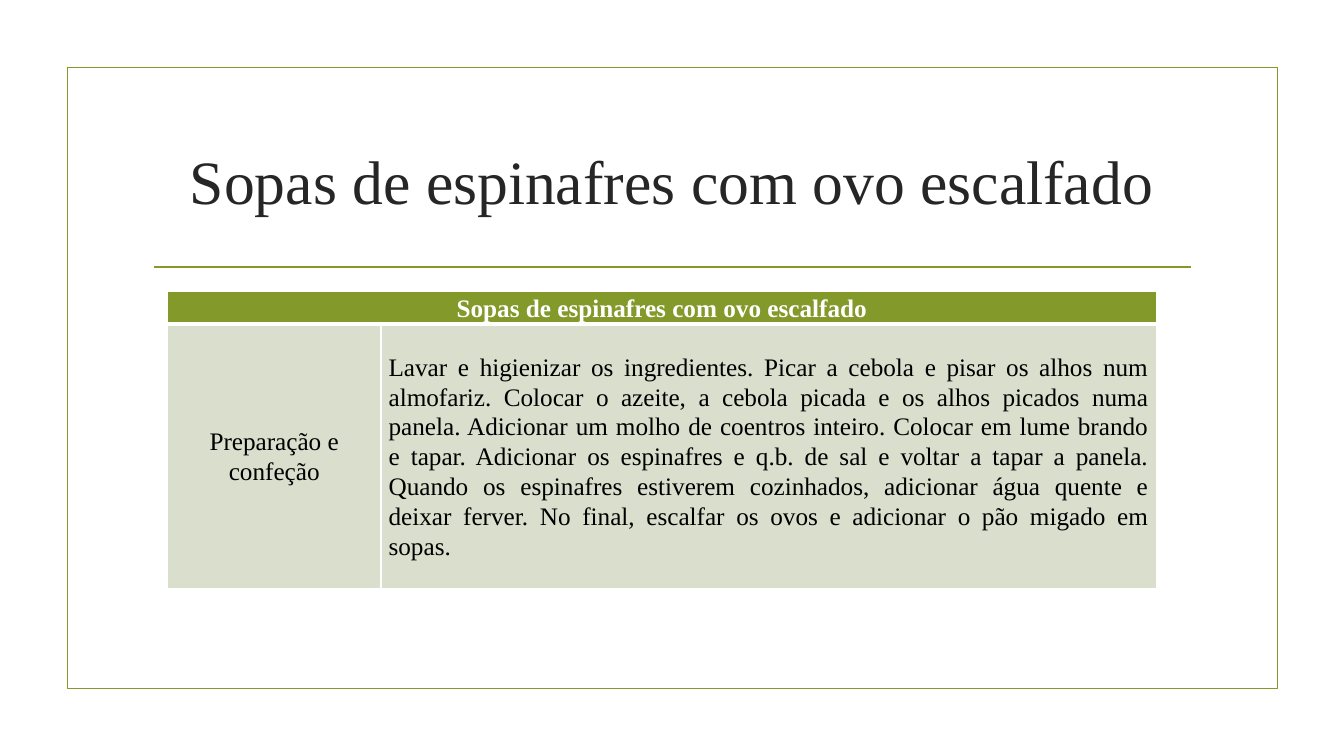
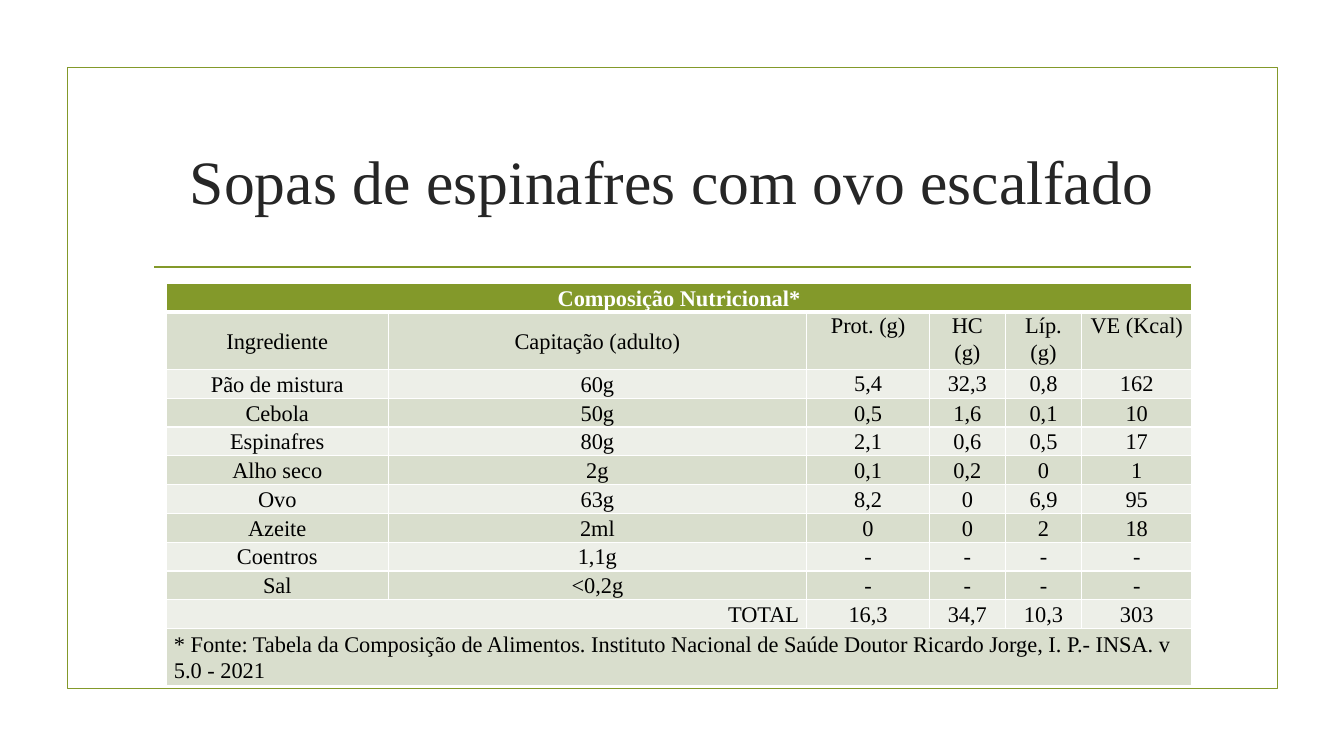
from dataclasses import dataclass, field

from lxml import etree
from pptx import Presentation
from pptx.dml.color import RGBColor
from pptx.enum import shapes, text
from pptx.oxml import ns
from pptx.util import Inches, Pt

FONT = "Times New Roman"
COLORS = {
    "green": "83992A",
    "title": "262626",
    "band_dark": "D9DECD",
    "band_light": "EDEFE8",
    "black": "000000",
    "white": "FFFFFF",
}
LEFT, CENTER = text.PP_ALIGN.LEFT, text.PP_ALIGN.CENTER
RIGHT, JUSTIFY = text.PP_ALIGN.RIGHT, text.PP_ALIGN.JUSTIFY
TOP, MIDDLE = text.MSO_ANCHOR.TOP, text.MSO_ANCHOR.MIDDLE

TITLE = "Sopas de espinafres com ovo escalfado"


@dataclass
class TableSpec:
    """A table; spans maps a row to how many of its first columns merge."""
    left: float
    top: float
    cols: list[float]
    heights: list[float]
    rows: list[list[str]]
    size: int
    spans: dict[int, int]
    aligns: dict[tuple[int, int], text.PP_ALIGN]
    top_cells: set[tuple[int, int]] = field(default_factory=set)


PREPARATION = TableSpec(
    left=1.66, top=2.89, cols=[2.12, 7.69], heights=[0.32, 2.63], size=18,
    rows=[
        [TITLE],
        ["Preparação e confeção",
         "Lavar e higienizar os ingredientes. Picar a cebola e pisar os alhos "
         "num almofariz. Colocar o azeite, a cebola picada e os alhos picados "
         "numa panela. Adicionar um molho de coentros inteiro. Colocar em lume "
         "brando e tapar. Adicionar os espinafres e q.b. de sal e voltar a "
         "tapar a panela. Quando os espinafres estiverem cozinhados, adicionar "
         "água quente e deixar ferver. No final, escalfar os ovos e adicionar "
         "o pão migado em sopas."],
    ],
    spans={0: 2}, aligns={(1, 1): JUSTIFY},
)

NUTRITION = TableSpec(
    left=1.65, top=2.81, cols=[2.2, 4.15, 1.22, 0.75, 0.76, 1.09],
    heights=[0.26, 0.53] + [0.26] * 9 + [0.53], size=16,
    rows=[
        ["Composição Nutricional*"],
        ["Ingrediente", "Capitação (adulto)", "Prot. (g)", "HC (g)", "Líp. (g)",
         "VE (Kcal)"],
        ["Pão de mistura", "60g", "5,4", "32,3", "0,8", "162"],
        ["Cebola", "50g", "0,5", "1,6", "0,1", "10"],
        ["Espinafres", "80g", "2,1", "0,6", "0,5", "17"],
        ["Alho seco", "2g", "0,1", "0,2", "0", "1"],
        ["Ovo", "63g", "8,2", "0", "6,9", "95"],
        ["Azeite", "2ml", "0", "0", "2", "18"],
        ["Coentros", "1,1g", "-", "-", "-", "-"],
        ["Sal", "<0,2g", "-", "-", "-", "-"],
        ["TOTAL", "", "16,3", "34,7", "10,3", "303"],
        ["* Fonte: Tabela da Composição de Alimentos. Instituto Nacional de "
         "Saúde Doutor Ricardo Jorge, I. P.- INSA. v 5.0 - 2021"],
    ],
    spans={0: 6, 10: 2, 11: 6}, aligns={(10, 0): RIGHT, (11, 0): LEFT},
    top_cells={(r, c) for r in (1, 2) for c in range(2, 6)},
)


def rgb(name: str) -> RGBColor:
    return RGBColor.from_string(COLORS[name])


def write(tf, content: str, *, size: float, color: str, bold: bool = False,
          align=CENTER, spacing: float = 1.0, after: float = 0) -> None:
    p = tf.paragraphs[0]
    p.alignment = align
    p.line_spacing = spacing
    p.space_after = Pt(after)
    r = p.add_run()
    r.text = content
    r.font.name = FONT
    r.font.size = Pt(size)
    r.font.bold = bold
    r.font.color.rgb = rgb(color)


def add_frame(s) -> None:
    """Draw the green outline and the rule below the title."""
    frame = s.shapes.add_shape(shapes.MSO_SHAPE.RECTANGLE, Inches(0.67),
                               Inches(0.67), Inches(12), Inches(6.16))
    frame.shadow.inherit = False
    frame.fill.background()
    rule = s.shapes.add_connector(shapes.MSO_CONNECTOR.STRAIGHT, Inches(1.53),
                                  Inches(2.65), Inches(11.81), Inches(2.65))
    etree.SubElement(rule._element.spPr, ns.qn("a:effectLst"))
    for sp in (frame, rule):
        sp.line.color.rgb = rgb("green")
        sp.line.width = Pt(1.25)


def add_title(s, content: str) -> None:
    box = s.shapes.add_textbox(Inches(1.42), Inches(1.07), Inches(10.49),
                               Inches(1.43))
    tf = box.text_frame
    tf.word_wrap = True
    tf.vertical_anchor = MIDDLE
    write(tf, content, size=44, color="title")


def set_borders(cell, **widths: float) -> None:
    """Give the cell white borders; keywords L, R, T, B are widths in points."""
    tc_pr = cell._tc.get_or_add_tcPr()
    for i, side in enumerate("LRTB"):
        ln = etree.Element(ns.qn(f"a:ln{side}"), w=str(Pt(widths.get(side, 1))))
        fill = etree.SubElement(ln, ns.qn("a:solidFill"))
        etree.SubElement(fill, ns.qn("a:srgbClr"), val=COLORS["white"])
        tc_pr.insert(i, ln)


def style_cell(cell, row: int) -> None:
    band = "green" if row == 0 else "band_dark" if row % 2 else "band_light"
    cell.fill.solid()
    cell.fill.fore_color.rgb = rgb(band)
    cell.margin_left = cell.margin_right = Pt(5.4)
    cell.margin_top = cell.margin_bottom = 0
    set_borders(cell, T=3 if row == 1 else 1, B=3 if row == 0 else 1)


def add_table(s, spec: TableSpec) -> None:
    table = s.shapes.add_table(
        len(spec.rows), len(spec.cols), Inches(spec.left), Inches(spec.top),
        Inches(sum(spec.cols)), Inches(sum(spec.heights))).table
    for col, width in zip(table.columns, spec.cols):
        col.width = Inches(width)
    for row, height in zip(table.rows, spec.heights):
        row.height = Inches(height)
    for r, count in spec.spans.items():
        table.cell(r, 0).merge(table.cell(r, count - 1))
    for r, values in enumerate(spec.rows):
        for c in range(len(spec.cols)):
            cell = table.cell(r, c)
            style_cell(cell, r)
            if cell.is_spanned:
                continue
            cell.vertical_anchor = TOP if (r, c) in spec.top_cells else MIDDLE
            write(cell.text_frame, values[c], size=spec.size,
                  color="white" if r == 0 else "black", bold=r == 0,
                  align=spec.aligns.get((r, c), CENTER), spacing=1.07, after=8)


def main() -> None:
    prs = Presentation()
    prs.slide_width, prs.slide_height = Inches(13.33), Inches(7.5)
    for spec in (PREPARATION, NUTRITION):
        s = prs.slides.add_slide(prs.slide_layouts[6])
        add_frame(s)
        add_title(s, TITLE)
        add_table(s, spec)
    prs.save("out.pptx")


if __name__ == "__main__":
    main()
